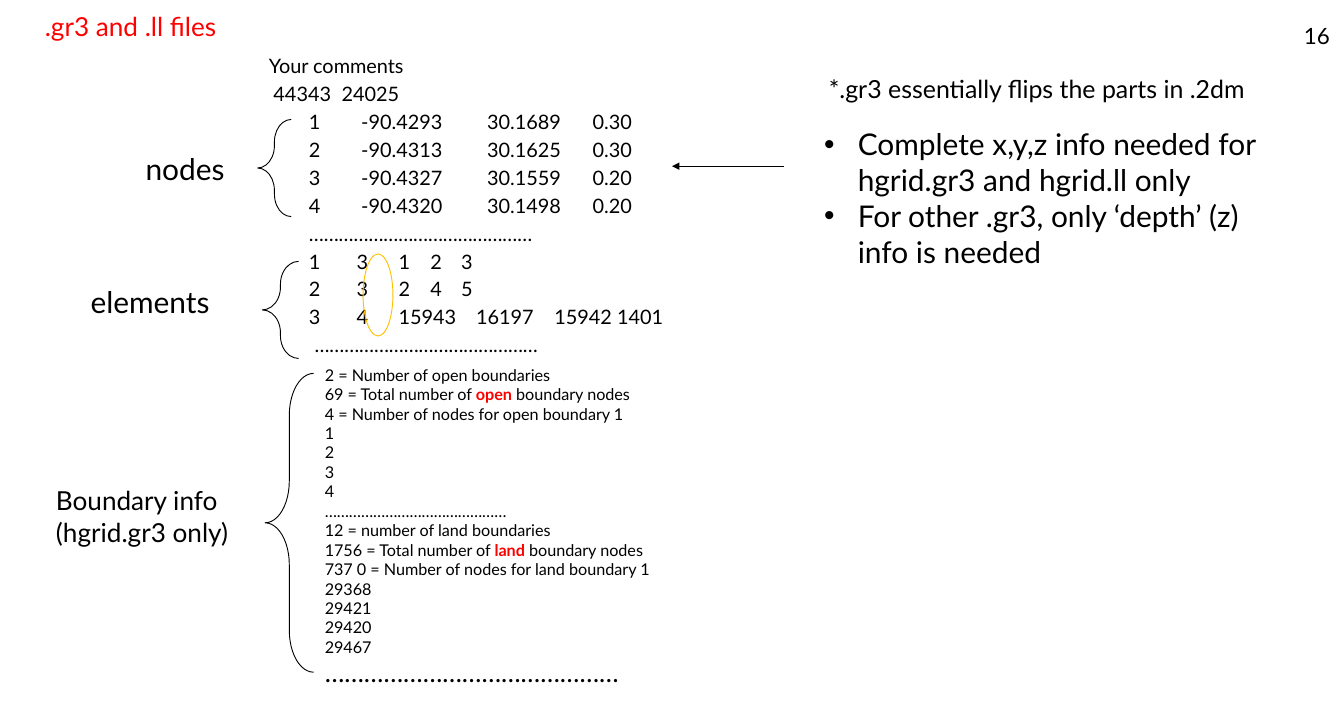
"""Builds the slide that explains the layout of .gr3 and .ll grid files."""
from lxml.etree import SubElement
from pptx import Presentation
from pptx.dml.color import RGBColor
from pptx.enum.shapes import MSO_CONNECTOR, MSO_SHAPE
from pptx.enum.text import MSO_ANCHOR as Anchor, MSO_AUTO_SIZE as AutoSize, PP_ALIGN as Align
from pptx.oxml.ns import qn
from pptx.util import Pt

PX = 9525
FONT = "Lato"
BLACK = RGBColor(0x00, 0x00, 0x00)
RED = RGBColor(0xFF, 0x00, 0x00)
AMBER = RGBColor(0xFF, 0xC0, 0x00)
DOTS = "………………………………………"

presentation = Presentation()
presentation.slide_width = 1440 * PX
presentation.slide_height = 768 * PX
slide = presentation.slides.add_slide(presentation.slide_layouts[6])


def add_text(box, lines, size, color=BLACK, wrap=True, inset=(12, 7)):
    """Add a text box; words between bars become bold and red."""
    shape = slide.shapes.add_textbox(*(length * PX for length in box))
    frame = shape.text_frame
    frame.word_wrap = wrap
    frame.auto_size = AutoSize.NONE
    frame.margin_left = frame.margin_right = inset[0] * PX
    frame.margin_top = frame.margin_bottom = inset[1] * PX
    for index, line in enumerate(lines):
        paragraph = frame.paragraphs[0] if index == 0 else frame.add_paragraph()
        for part, words in enumerate(line.split("|")):
            run = paragraph.add_run()
            run.text = words
            run.font.name = FONT
            run.font.size = Pt(size)
            run.font.bold = part % 2 == 1
            run.font.color.rgb = RED if part % 2 else color
    return frame


def add_outline(kind, box, color):
    """Add an unfilled preset shape with a thin line."""
    shape = slide.shapes.add_shape(kind, *(length * PX for length in box))
    shape.shadow.inherit = False
    shape.fill.background()
    shape.line.color.rgb = color
    shape.line.width = Pt(0.75)
    return shape


page_number = add_text((1341, 9, 96, 51), ["16"], 18)
page_number.vertical_anchor = Anchor.BOTTOM
page_number.paragraphs[0].alignment = Align.RIGHT

title = add_text((36, 17, 348, 35), [".gr3 and .ll files"], 21, RED)
title.vertical_anchor = Anchor.BOTTOM

node_stops = (43, 99, 234, 347)
element_stops = (43, 94, 139, 173, 206)
grid_rows = [
    ("Your comments", ()),
    ("\t44343\t24025", (5, 78)),
    ("\t1\t-90.4293\t30.1689\t0.30", node_stops),
    ("\t2\t-90.4313\t30.1625\t0.30", node_stops),
    ("\t3\t-90.4327\t30.1559\t0.20", node_stops),
    ("\t4\t-90.4320\t30.1498\t0.20", node_stops),
    ("\t" + DOTS, (43,)),
    ("\t1\t3\t1\t2\t3", element_stops),
    ("\t2\t3\t2\t4\t5", element_stops),
    ("\t3\t4\t15943\t16197\t15942 1401", (43, 94, 139, 222, 306)),
    ("\t" + DOTS, (49,)),
]
grid = add_text((276, 51, 840, 348), [line for line, stops in grid_rows], 16)
for paragraph, (line, stops) in zip(grid.paragraphs, grid_rows):
    paragraph.space_before = Pt(3.2)
    tab_list = SubElement(paragraph._p.get_or_add_pPr(), qn("a:tabLst"))
    for stop in stops:
        SubElement(tab_list, qn("a:tab"), pos=str(stop * PX), algn="l")

sections = [
    (["nodes"], (144, 154, 110, 52), 24, (276, 128, 36, 104), 0.667),
    (["elements"], (85, 297, 155, 52), 24, (281, 280, 39, 104), 0.625),
    (["Boundary info", "(hgrid.gr3 only)"], (48, 512, 222, 81), 21, (284, 400, 52, 320), 0.861),
]
for label, label_box, size, brace_box, curve in sections:
    add_text(label_box, label, size, wrap=False)
    brace = add_outline(MSO_SHAPE.LEFT_BRACE, brace_box, BLACK)
    brace.adjustments[0] = curve

boundary_lines = [
    "2 = Number of open boundaries",
    "69 = Total number of |open| boundary nodes",
    "4 = Number of nodes for open boundary 1",
    "1", "2", "3", "4",
    DOTS,
    "12 = number of land boundaries",
    "1756 = Total number of |land| boundary nodes",
    "737 0 = Number of nodes for land boundary 1",
    "29368", "29421", "29420", "29467",
    DOTS,
]
boundaries = add_text((336, 384, 720, 383), boundary_lines, 13)
boundaries.paragraphs[-1].runs[0].font.size = Pt(21)

notes = add_text((871, 128, 518, 168), [
    "Complete x,y,z info needed for hgrid.gr3 and hgrid.ll only",
    "For other .gr3, only ‘depth’ (z) info is needed",
], 24)
for paragraph in notes.paragraphs:
    properties = paragraph._p.get_or_add_pPr()
    properties.set("marL", str(36 * PX))
    properties.set("indent", str(-36 * PX))
    SubElement(properties, qn("a:buFont"), typeface="Arial")
    SubElement(properties, qn("a:buChar"), char="•")

arrow = slide.shapes.add_connector(MSO_CONNECTOR.STRAIGHT, 840 * PX, 178 * PX, 720 * PX, 178 * PX)
arrow.line.color.rgb = BLACK
arrow.line.width = Pt(0.75)
SubElement(arrow.line._get_or_add_ln(), qn("a:tailEnd"), type="triangle")
SubElement(arrow._element.spPr, qn("a:effectLst"))

add_text((878, 74, 518, 42), ["*.gr3 essentially flips the parts in .2dm"], 20, inset=(10, 5))
add_outline(MSO_SHAPE.OVAL, (389, 272, 32, 88), AMBER)

presentation.save("out.pptx")
